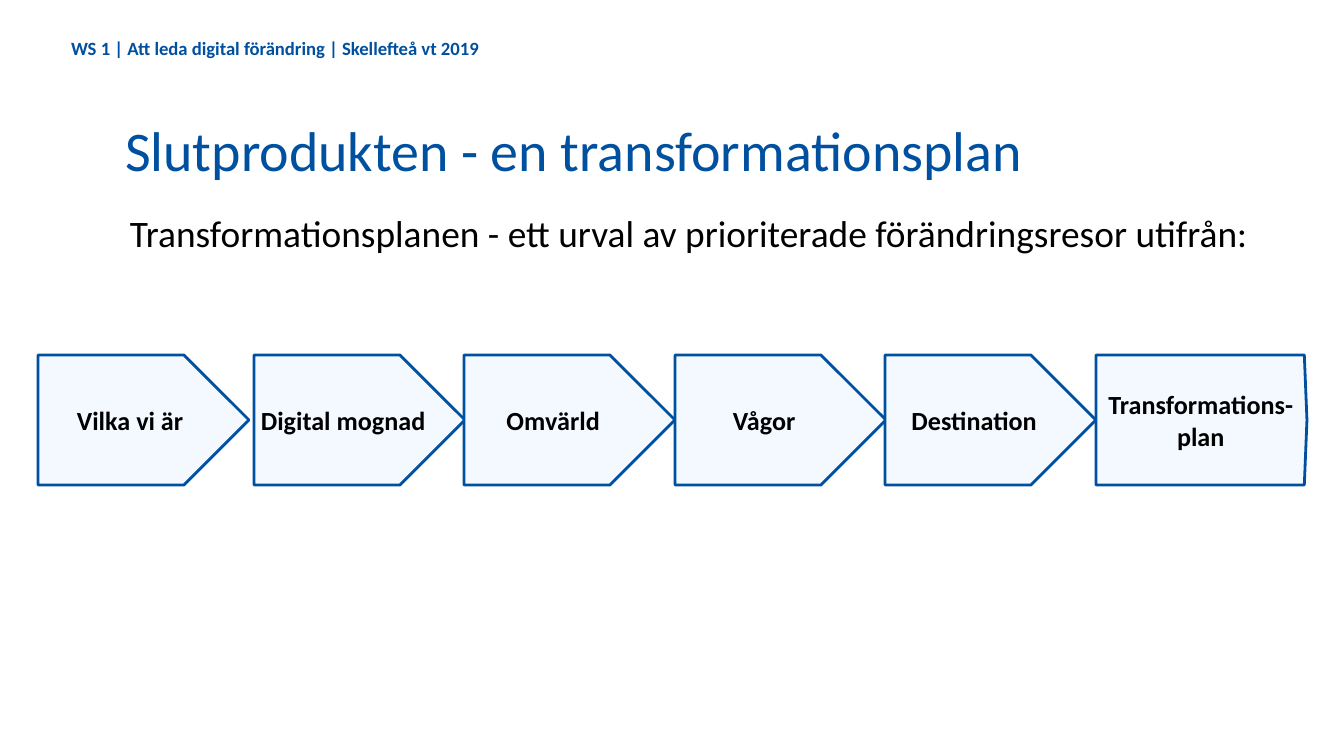
"""Builds the slide about the transformation plan and its six steps."""
from dataclasses import dataclass

from pptx import Presentation
from pptx import util as u
from pptx.dml.color import RGBColor
from pptx.enum import shapes, text


@dataclass(frozen=True)
class Theme:
    font: str = "Calibri"
    blue: RGBColor = RGBColor(0x00, 0x50, 0xA0)
    pale: RGBColor = RGBColor(0xF4, 0xF9, 0xFF)
    black: RGBColor = RGBColor(0, 0, 0)
    header: int = 10
    step: int = 14
    lead: int = 20
    title: int = 30


THEME = Theme()
PX_PER_INCH = 134.4


def px(*lengths):
    return [u.Emu(round(n * 914400 / PX_PER_INCH)) for n in lengths]


def write(box, wording, size, colour, insets, bold=False, align=text.PP_ALIGN.LEFT):
    frame = box.text_frame
    frame.word_wrap = True
    frame.auto_size = text.MSO_AUTO_SIZE.NONE
    frame.vertical_anchor = text.MSO_ANCHOR.MIDDLE
    side, end = px(*insets)
    frame.margin_left = frame.margin_right = side
    frame.margin_top = frame.margin_bottom = end
    para = frame.paragraphs[0]
    para.text = wording
    para.alignment = align
    para.font.name = THEME.font
    para.font.size = u.Pt(size)
    para.font.bold = bold
    para.font.color.rgb = colour
    return para


deck = Presentation()
deck.slide_width, deck.slide_height = px(1344, 756)
page = deck.slides.add_slide(deck.slide_layouts[5])

header = page.shapes.add_textbox(*px(58, 36, 1185, 25))
write(header, "WS 1 | Att leda digital förändring | Skellefteå vt 2019",
      THEME.header, THEME.blue, (13, 7), bold=True)

title = page.shapes.title
title.left, title.top, title.width, title.height = px(112, 106, 1133, 86)
write(title, "Slutprodukten - en transformationsplan", THEME.title, THEME.blue, (13, 7))

lead = page.shapes.add_textbox(*px(127, 195, 1184, 69))
para = write(lead, "Transformationsplanen - ett urval av prioriterade förändringsresor utifrån:",
             THEME.lead, THEME.black, (3, 3))
para.line_spacing = 1.15

STEP_TOP, STEP_WIDTH, STEP_HEIGHT = 355, 211, 130
FIRST_LEFT, SECOND_LEFT, TWO_STEPS = 38, 254, 421
steps = [" Vilka vi är", "Digital mognad", "Omvärld", "Vågor", "Destination",
         "Transformations-\nplan"]
lefts = [FIRST_LEFT] + [SECOND_LEFT + i * TWO_STEPS // 2 for i in range(len(steps) - 1)]

for wording, left in zip(steps, lefts):
    step = page.shapes.add_shape(shapes.MSO_SHAPE.PENTAGON,
                                 *px(left, STEP_TOP, STEP_WIDTH, STEP_HEIGHT))
    step.adjustments[0] = 0.02 if wording == steps[-1] else 0.5
    step.shadow.inherit = False
    step.fill.solid()
    step.fill.fore_color.rgb = THEME.pale
    step.line.color.rgb = THEME.blue
    step.line.width = u.Pt(1.5)
    write(step, wording, THEME.step, THEME.black, (5, 5), bold=True,
          align=text.PP_ALIGN.CENTER)

deck.save("out.pptx")
